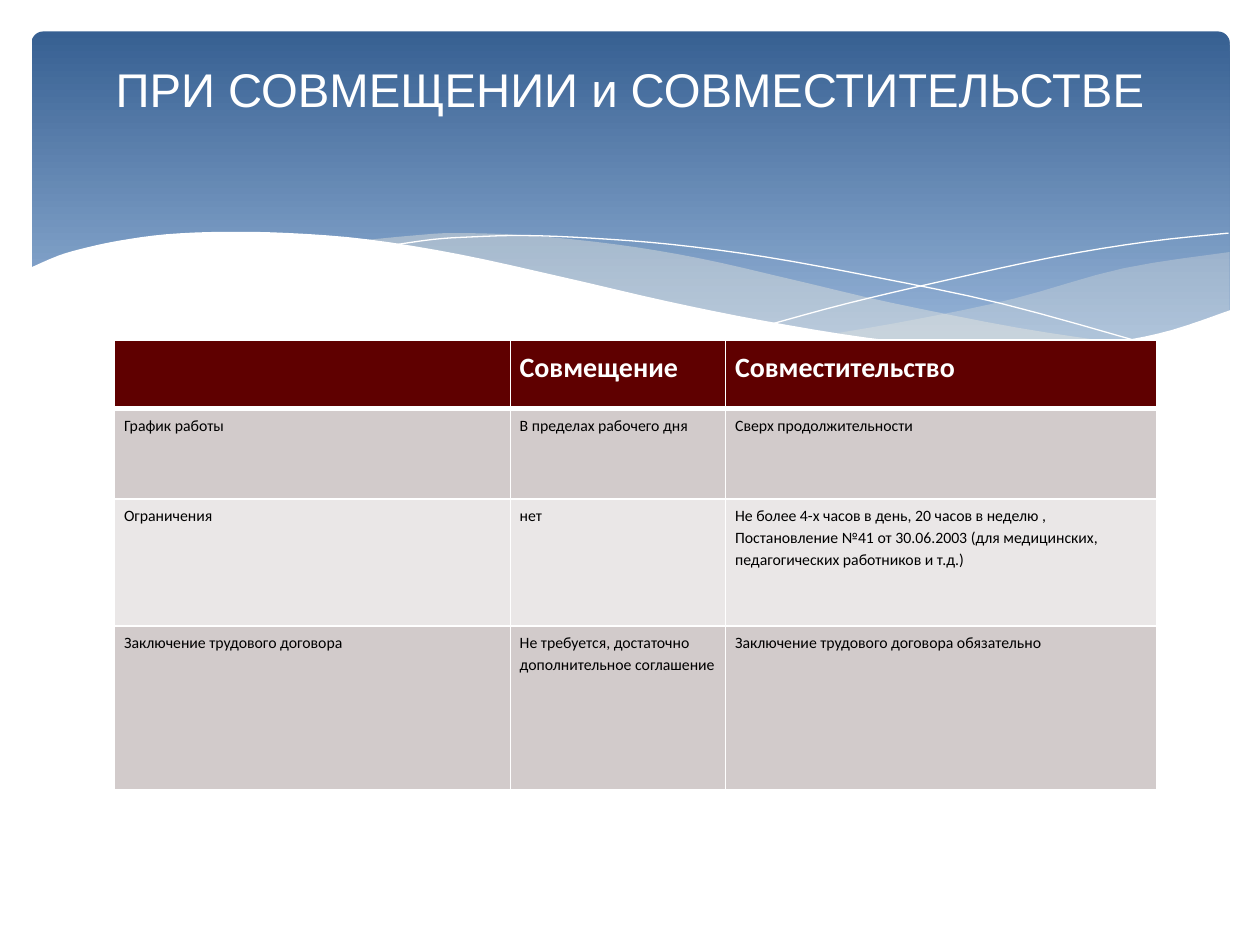
from dataclasses import dataclass
from typing import Optional

from lxml.etree import SubElement
from pptx import Presentation
from pptx.dml.color import RGBColor
from pptx.enum.shapes import MSO_SHAPE as Shape
from pptx.enum.text import MSO_ANCHOR as Anchor, PP_ALIGN as Align
from pptx.oxml import parse_xml
from pptx.oxml.ns import nsdecls, qn
from pptx.util import Pt

Point = tuple[float, float]
COLORS = {
    "white": "FFFFFF", "black": "000000", "sky_top": "376092", "sky_bottom": "95B3D7",
    "mist": "EEECE1", "header": "5F0000", "odd_row": "D2CBCB", "even_row": "EAE7E7",
}


@dataclass(frozen=True)
class Wave:
    arcs: tuple[tuple[Point, ...], ...]
    fill: Optional[str] = None
    opacity: int = 100


@dataclass(frozen=True)
class TableRow:
    height: float
    fill: str
    texts: tuple[str, str, str]


WAVES = (
    Wave((
        ((702.7, 144), (641.5, 153.4), (579.6, 170.6), (524.9, 182.2), (475.9, 190.8)),
        ((475.9, 190.8), (507.6, 195.1), (545, 198.7), (578.2, 200.2), (614.9, 198.7),
         (651.6, 193.7), (678.2, 186.5), (702.7, 177.8)),
    ), "mist", 29),
    Wave((
        ((643, 196.6), (581, 187.2), (508.3, 172.8), (452.9, 159.8), (399.6, 147.6),
         (352.1, 139.7), (302.4, 134.6), (259.9, 133.2), (236.2, 134.6), (205.9, 137.5)),
        ((205.9, 137.5), (246.2, 143.3), (290.9, 151.9), (323.3, 159.8), (381.6, 172.8),
         (445, 185.8), (500.4, 194.4), (547.9, 199.4), (589, 200.2), (617, 199.4),
         (643, 196.6)),
    ), "mist", 40),
    Wave((
        ((222.5, 140.4), (247.7, 136.8), (269.3, 135.4), (299.5, 134.6), (337.7, 136.1),
         (383.8, 139.7), (437.8, 146.9), (500.4, 158.4), (572.4, 173.5), (653, 195.8)),
    )),
    Wave((
        ((441.4, 185), (483.8, 173.5), (538.6, 160.6), (601.9, 146.9), (655.2, 138.2),
         (702, 133.2)),
    )),
    Wave((
        ((703.4, 177.1), (669.6, 188.6), (638.6, 195.1), (602.6, 198.7), (582.5, 199.4),
         (547.9, 198), (495.4, 193), (434.2, 182.9), (380.9, 172.1), (321.8, 158.4),
         (262.8, 145.4), (210.2, 136.8), (165.6, 133.2), (127.4, 132.5), (95, 133.9),
         (68.4, 137.5), (48.2, 141.8), (33.1, 146.2), (16.6, 153.4)),
        ((16.6, 236.9), (703.4, 236.9)),
    ), "white"),
)
COLUMN_WIDTHS = (226.1, 123.1, 246.2)
ROWS = (
    TableRow(38.9, "header", ("", "Совмещение", "Совместительство")),
    TableRow(51.8, "odd_row", (
        "График работы", "В пределах рабочего дня", "Сверх продолжительности")),
    TableRow(72.7, "even_row", (
        "Ограничения", "нет",
        "Не более 4-х часов в день, 20 часов в неделю , Постановление №41 от "
        "30.06.2003 (для медицинских, педагогических работников и т.д.)")),
    TableRow(93.6, "odd_row", (
        "Заключение трудового договора",
        "Не требуется, достаточно дополнительное соглашение",
        "Заключение трудового договора обязательно")),
)


def color(name: str) -> RGBColor:
    return RGBColor.from_string(COLORS[name])


def smooth_arc(anchors: tuple[Point, ...], steps: int = 4) -> list[Point]:
    padded = (anchors[0], *anchors, anchors[-1])
    points = [anchors[0]]
    for before, start, end, after in zip(padded, padded[1:], padded[2:], padded[3:]):
        for step in range(1, steps + 1):
            t = step / steps
            points.append(tuple(
                (2 * b + (c - a) * t + (2 * a - 5 * b + 4 * c - d) * t**2
                 + (3 * b - a - 3 * c + d) * t**3) / 2
                for a, b, c, d in zip(before, start, end, after)))
    return points


def draw_sky(slide) -> None:
    sky = slide.shapes.add_shape(
        Shape.ROUNDED_RECTANGLE, Pt(18), Pt(18), Pt(684.7), Pt(194.4))
    sky.adjustments[0] = 0.034
    sky.shadow.inherit = False
    sky.line.fill.background()
    sky.fill.gradient()
    sky.fill.gradient_angle = 270
    for stop, name, position in zip(
            sky.fill.gradient_stops, ("sky_top", "sky_bottom"), (0, 0.9)):
        stop.color.rgb = color(name)
        stop.position = position


def draw_wave(slide, wave: Wave) -> None:
    points = [(Pt(x), Pt(y)) for arc in wave.arcs for x, y in smooth_arc(arc)]
    builder = slide.shapes.build_freeform(*points[0])
    builder.add_line_segments(points[1:], close=wave.fill is not None)
    shape = builder.convert_to_shape()
    shape.shadow.inherit = False
    if wave.fill is None:
        shape.fill.background()
        shape.line.color.rgb = color("white")
        shape.line.width = Pt(0)
        return
    shape.line.fill.background()
    shape.fill.solid()
    shape.fill.fore_color.rgb = color(wave.fill)
    if wave.opacity < 100:
        tint = shape.fill._xPr.find(qn("a:solidFill"))[0]
        SubElement(tint, qn("a:alpha"), val=str(wave.opacity * 1000))


def place_title(slide) -> None:
    title = slide.shapes.title
    slide.shapes.element.append(title.element)
    title.left, title.top, title.width, title.height = Pt(36), Pt(26.6), Pt(648), Pt(98.6)
    frame = title.text_frame
    frame.text = "ПРИ СОВМЕЩЕНИИ и СОВМЕСТИТЕЛЬСТВЕ"
    frame.vertical_anchor = Anchor.MIDDLE
    frame.margin_bottom = Pt(54)
    paragraph = frame.paragraphs[0]
    paragraph.alignment = Align.CENTER
    paragraph.font.name = "Arial"
    paragraph.font.size = Pt(27)
    paragraph.font.color.rgb = color("white")


def set_borders(cell, top: float, bottom: float) -> None:
    properties = cell._tc.get_or_add_tcPr()
    for index, (side, width) in enumerate(
            (("L", 1), ("R", 1), ("T", top), ("B", bottom))):
        properties.insert(index, parse_xml(
            f'<a:ln{side} {nsdecls("a")} w="{Pt(width)}"><a:solidFill>'
            f'<a:srgbClr val="{COLORS["white"]}"/></a:solidFill></a:ln{side}>'))


def fill_cell(cell, text: str, fill: str, row_index: int) -> None:
    is_header = row_index == 0
    cell.fill.solid()
    cell.fill.fore_color.rgb = color(fill)
    set_borders(cell, 3 if row_index == 1 else 1, 3 if is_header else 1)
    cell.margin_left = cell.margin_right = Pt(5.4)
    cell.margin_top = cell.margin_bottom = Pt(2.9)
    cell.text = text
    paragraph = cell.text_frame.paragraphs[0]
    paragraph.line_spacing = 1.15
    paragraph.space_after = Pt(10)
    paragraph.font.name = "Calibri"
    paragraph.font.size = Pt(16 if is_header else 9)
    paragraph.font.bold = is_header
    paragraph.font.color.rgb = color("white" if is_header else "black")


def draw_table(slide) -> None:
    table = slide.shapes.add_table(
        len(ROWS), len(COLUMN_WIDTHS), Pt(65.5), Pt(194.4),
        Pt(sum(COLUMN_WIDTHS)), Pt(sum(row.height for row in ROWS))).table
    for column, width in zip(table.columns, COLUMN_WIDTHS):
        column.width = Pt(width)
    for row_index, row in enumerate(ROWS):
        table.rows[row_index].height = Pt(row.height)
        for column_index, text in enumerate(row.texts):
            fill_cell(table.cell(row_index, column_index), text, row.fill, row_index)


def main() -> None:
    presentation = Presentation()
    presentation.slide_width, presentation.slide_height = Pt(720), Pt(540)
    slide = presentation.slides.add_slide(presentation.slide_layouts[5])
    draw_sky(slide)
    for wave in WAVES:
        draw_wave(slide, wave)
    place_title(slide)
    draw_table(slide)
    presentation.save("out.pptx")


if __name__ == "__main__":
    main()
